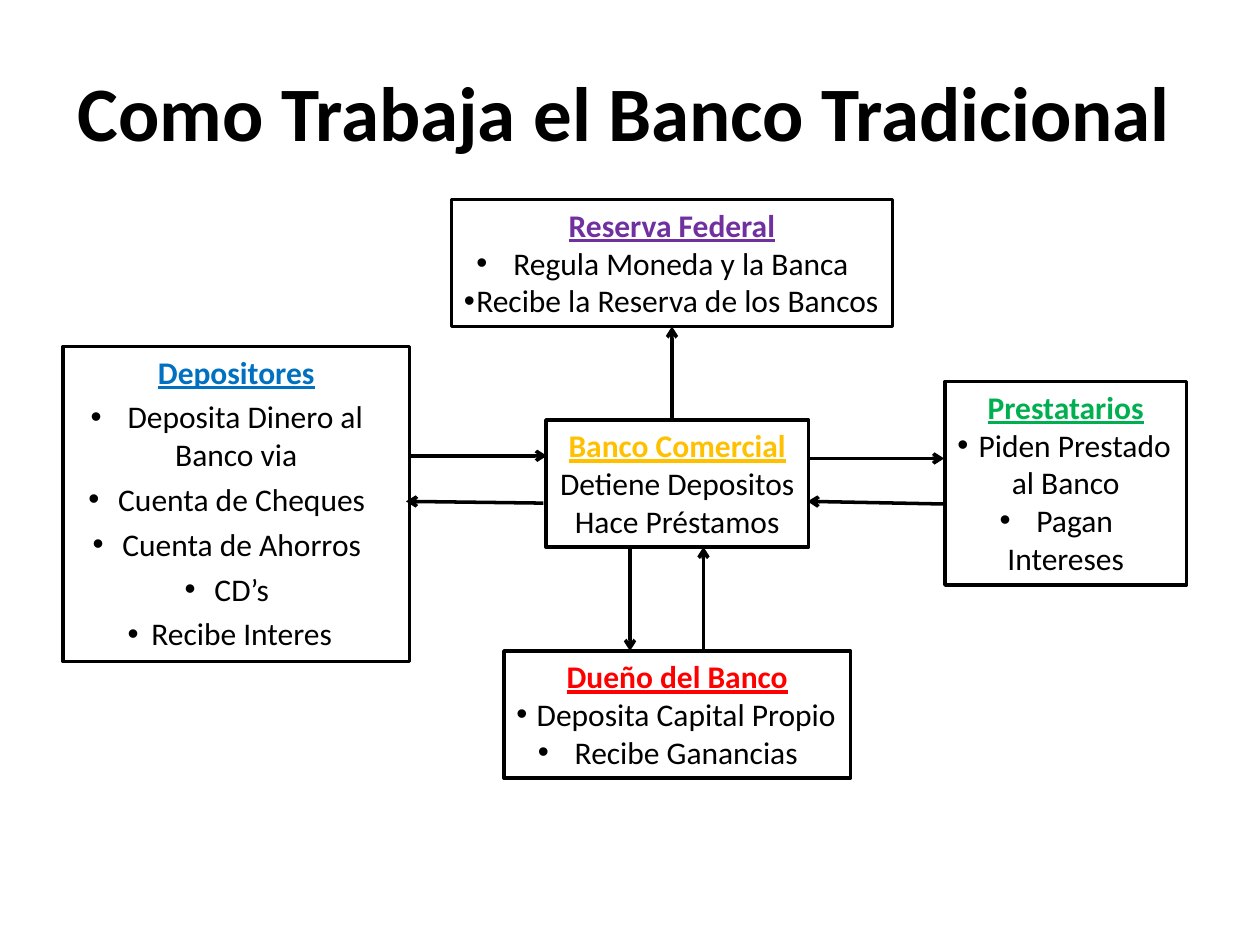
from pptx import Presentation
from pptx.dml.color import RGBColor
from pptx.enum.shapes import MSO_CONNECTOR, MSO_SHAPE
from pptx.enum.text import MSO_ANCHOR, MSO_AUTO_SIZE, PP_ALIGN
from pptx.oxml.ns import qn
from pptx.util import Pt
from lxml.etree import SubElement

BLACK = RGBColor(0x00, 0x00, 0x00)
WHITE = RGBColor(0xFF, 0xFF, 0xFF)
PURPLE = RGBColor(0x70, 0x30, 0xA0)
GOLD = RGBColor(0xFF, 0xC0, 0x00)
BLUE = RGBColor(0x00, 0x70, 0xC0)
GREEN = RGBColor(0x00, 0xB0, 0x50)
RED = RGBColor(0xFF, 0x00, 0x00)


def write_line(paragraph, text, size, color=BLACK, bold=False):
    paragraph.text = text
    paragraph.alignment = PP_ALIGN.CENTER
    paragraph.font.name = "Calibri"
    paragraph.font.size = Pt(size)
    paragraph.font.bold = bold
    paragraph.font.color.rgb = color


def add_bullet(paragraph, hanging):
    properties = paragraph._p.get_or_add_pPr()
    properties.set("marL", "0")
    properties.set("indent", str(-Pt(hanging)))
    SubElement(properties, qn("a:buFont"), typeface="Arial")
    SubElement(properties, qn("a:buChar"), char="•")


presentation = Presentation()
presentation.slide_width = Pt(720)
presentation.slide_height = Pt(540)
slide = presentation.slides.add_slide(presentation.slide_layouts[6])

title = slide.shapes.add_textbox(Pt(12), Pt(18), Pt(690), Pt(90)).text_frame
title.word_wrap = True
title.vertical_anchor = MSO_ANCHOR.MIDDLE
write_line(title.paragraphs[0], "Como Trabaja el Banco Tradicional", 44, bold=True)

parties = [
    ("Reserva Federal", PURPLE, (258, 114, 252, 72.7), 0,
     [(" Regula Moneda y la Banca", 17), ("Recibe la Reserva de los Bancos", 17)]),
    ("Banco Comercial", GOLD, (312, 240, 150, 72.7), 0,
     [("Detiene Depositos", None), ("Hace Préstamos", None)]),
    ("Depositores", BLUE, (36, 198, 198, 180), 4,
     [(" Deposita Dinero al Banco via", 17), ("Cuenta de Cheques", 17),
      ("Cuenta de Ahorros", 17), ("CD’s", 17), ("Recibe Interes", 13.5)]),
    ("Prestatarios", GREEN, (540, 218, 138, 116.3), 0,
     [(" Piden Prestado al Banco", 17), (" Pagan Intereses", 17)]),
    ("Dueño del Banco", RED, (288, 372, 198, 72.7), 0,
     [(" Deposita Capital Propio", 17), (" Recibe Ganancias", 17)]),
]
for name, color, bounds, gap, roles in parties:
    party = slide.shapes.add_shape(MSO_SHAPE.RECTANGLE, *map(Pt, bounds))
    party.shadow.inherit = False
    party.fill.solid()
    party.fill.fore_color.rgb = WHITE
    party.line.color.rgb = BLACK
    party.line.width = Pt(2)
    frame = party.text_frame
    frame.word_wrap = True
    frame.auto_size = MSO_AUTO_SIZE.SHAPE_TO_FIT_TEXT
    frame.vertical_anchor = MSO_ANCHOR.TOP
    heading = frame.paragraphs[0]
    write_line(heading, name, 18, color, bold=True)
    heading.font.underline = True
    for role, hanging in roles:
        paragraph = frame.add_paragraph()
        if gap:
            paragraph.space_before = Pt(gap)
        if hanging:
            add_bullet(paragraph, hanging)
        write_line(paragraph, role, 18)

flows = [
    (461.5, 262, 539.5, 262),
    (360, 312.5, 360, 372),
    (384, 240, 384, 186.5),
    (234.5, 260.5, 312.5, 260.5),
    (402, 372, 402, 312.5),
    (539.5, 288, 461.5, 286.5),
    (310.5, 287.5, 232, 286.5),
]
for ends in flows:
    flow = slide.shapes.add_connector(MSO_CONNECTOR.STRAIGHT, *map(Pt, ends))
    flow.line.color.rgb = BLACK
    flow.line.width = Pt(2)
    SubElement(flow.line._get_or_add_ln(), qn("a:tailEnd"), type="arrow")
    SubElement(flow._element.spPr, qn("a:effectLst"))

presentation.save("out.pptx")
